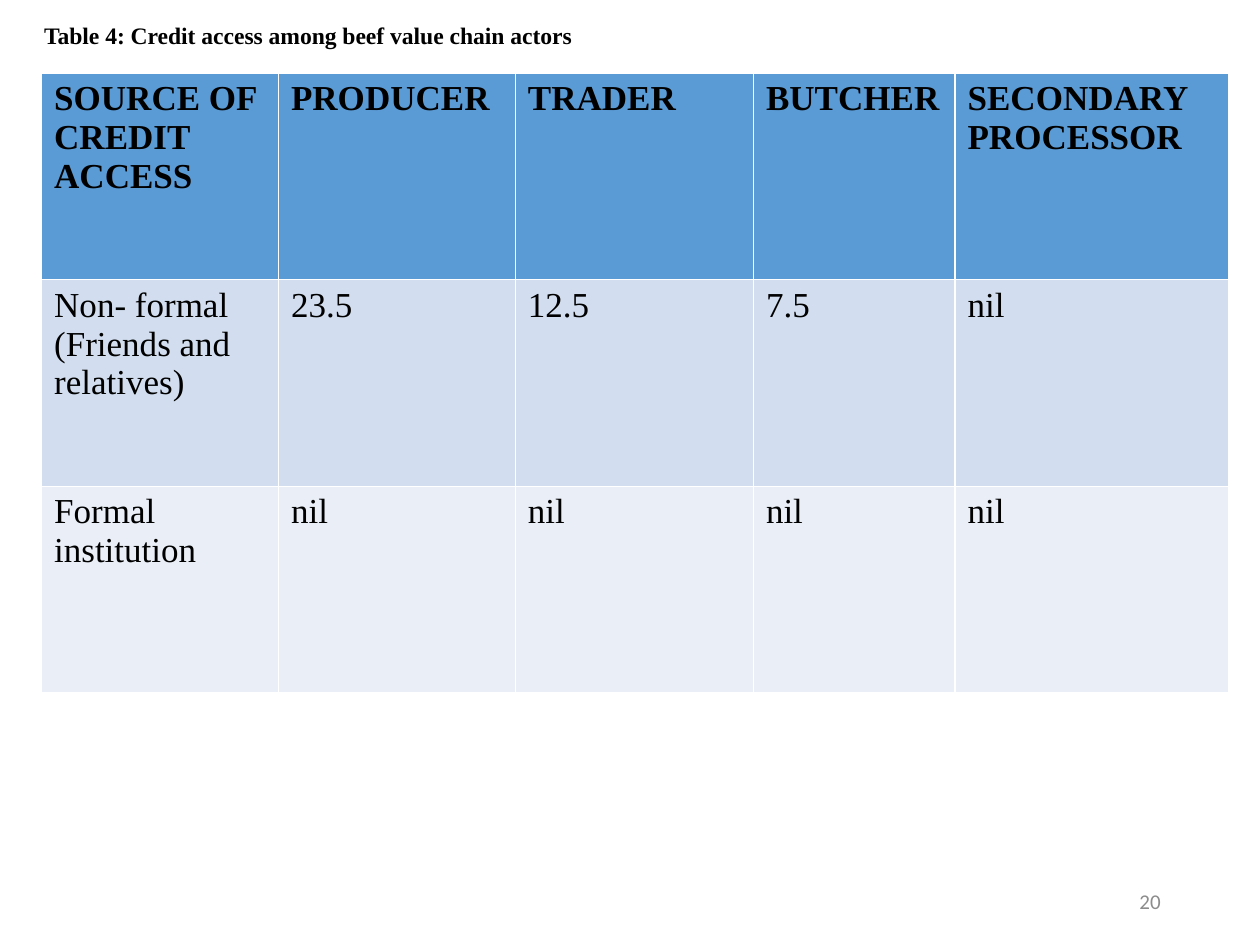
from pptx import Presentation
from pptx.dml.color import RGBColor
from pptx.enum.text import MSO_ANCHOR, PP_ALIGN
from pptx.util import Inches, Pt

BLACK = RGBColor(0x00, 0x00, 0x00)
GREY = RGBColor(0x8C, 0x8C, 0x8C)
HEADER_BLUE = RGBColor(0x5B, 0x9B, 0xD5)
BAND_BLUE = RGBColor(0xD2, 0xDE, 0xEF)
PALE_BLUE = RGBColor(0xEA, 0xEF, 0xF7)
SERIF = "Times New Roman"

ROWS = [
    ["SOURCE OF CREDIT ACCESS", "PRODUCER", "TRADER", "BUTCHER", "SECONDARY PROCESSOR"],
    ["Non- formal (Friends and relatives)", "23.5", "12.5", "7.5", "nil"],
    ["Formal institution", "nil", "nil", "nil", "nil"],
]
ROW_FILLS = [HEADER_BLUE, BAND_BLUE, PALE_BLUE]
COLUMN_WIDTHS = [1.88, 1.88, 1.89, 1.6, 2.17]
ROW_HEIGHT = 1.64


def write(frame, text, size, font_name=SERIF, color=BLACK, bold=False):
    frame.text = text
    para = frame.paragraphs[0]
    font = para.runs[0].font
    font.name, font.size, font.bold = font_name, Pt(size), bold
    font.color.rgb = color
    return para


deck = Presentation()
deck.slide_width, deck.slide_height = Inches(10), Inches(7.5)
page = deck.slides.add_slide(deck.slide_layouts.get_by_name("Title Only"))

# Title
title = page.shapes.title
title.left, title.top = Inches(0.25), Inches(0.17)
title.width, title.height = Inches(9.5), Inches(0.25)
title.text_frame.vertical_anchor = MSO_ANCHOR.MIDDLE
para = write(title.text_frame, "Table 4: Credit access among beef value chain actors", 13.5, bold=True)
para.alignment = PP_ALIGN.LEFT
para.line_spacing = 0.9

# Credit table; the default table style supplies the white cell borders
table = page.shapes.add_table(
    len(ROWS), len(COLUMN_WIDTHS), Inches(0.33), Inches(0.58),
    Inches(sum(COLUMN_WIDTHS)), Inches(ROW_HEIGHT * len(ROWS)),
).table
for column, width in zip(table.columns, COLUMN_WIDTHS):
    column.width = Inches(width)
for row_index, (row, texts, fill) in enumerate(zip(table.rows, ROWS, ROW_FILLS)):
    row.height = Inches(ROW_HEIGHT)
    for cell, text in zip(row.cells, texts):
        cell.fill.solid()
        cell.fill.fore_color.rgb = fill
        write(cell.text_frame, text, 20, bold=row_index == 0)

# Page number
number_box = page.shapes.add_textbox(Inches(7.06), Inches(6.95), Inches(2.25), Inches(0.4))
number_box.text_frame.word_wrap = True
number_box.text_frame.vertical_anchor = MSO_ANCHOR.MIDDLE
write(number_box.text_frame, "20", 12, "Calibri", GREY).alignment = PP_ALIGN.RIGHT

deck.save("out.pptx")
